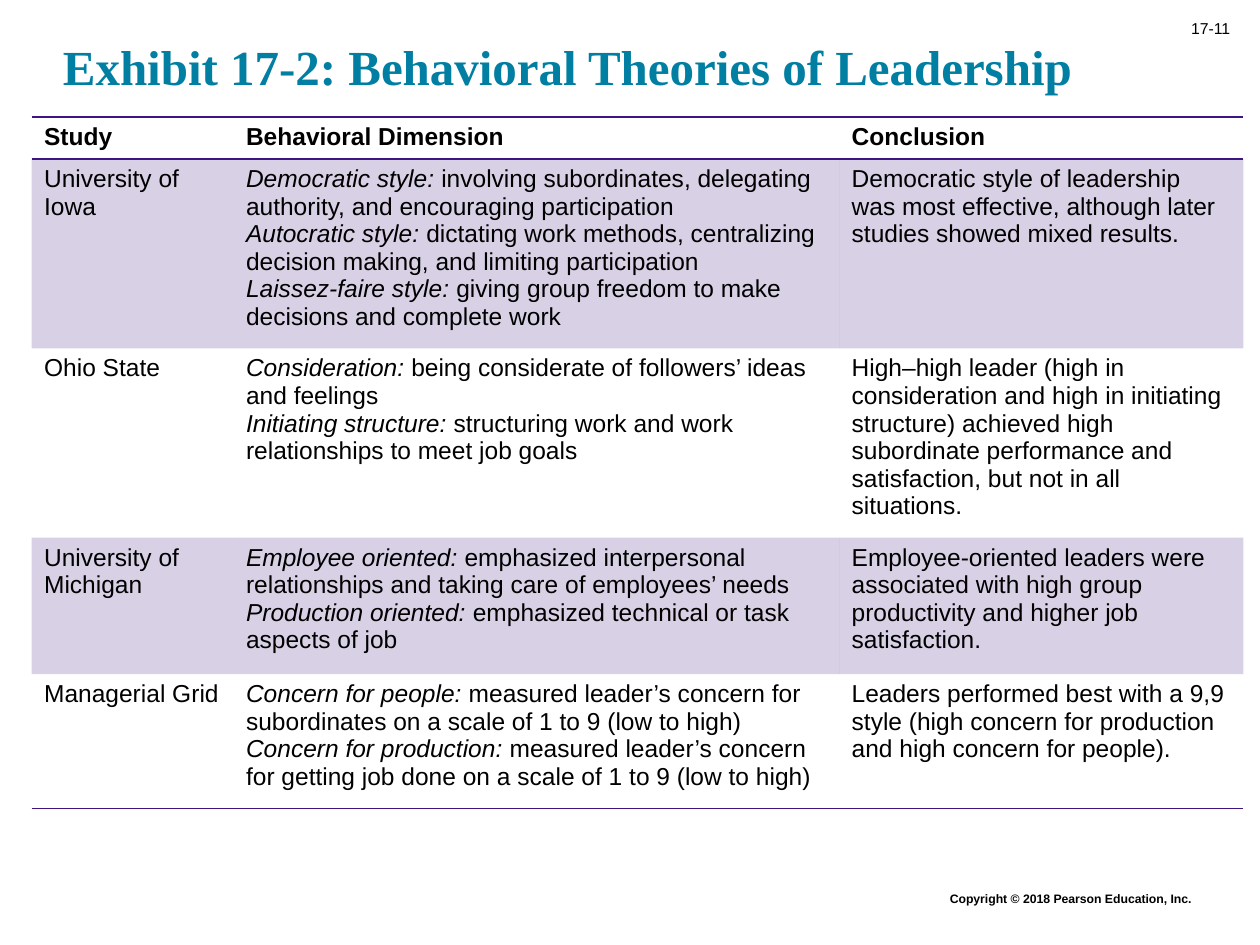
import pptx
import pptx.util
import pptx.dml.color
import pptx.enum.text
import pptx.oxml
from lxml import etree

Pt = pptx.util.Pt
RGB = pptx.dml.color.RGBColor.from_string
ALIGN = pptx.enum.text.PP_ALIGN
ANCHOR = pptx.enum.text.MSO_ANCHOR

# Content: a cell is a list of paragraphs, each an (italic lead, plain text) pair
TITLE = "Exhibit 17-2: Behavioral Theories of Leadership"
NUMBER = "17-11"
COPYRIGHT = "Copyright © 2018 Pearson Education, Inc."
HEADER = ["Study", "Behavioral Dimension", "Conclusion"]
STUDIES = [
    ("University of Iowa",
     [("Democratic style: ", "involving subordinates, delegating authority, "
       "and encouraging participation"),
      ("Autocratic style: ", "dictating work methods, centralizing decision making, "
       "and limiting participation"),
      ("Laissez-faire style: ", "giving group freedom to make decisions "
       "and complete work")],
     "Democratic style of leadership was most effective, although later studies "
     "showed mixed results."),
    ("Ohio State",
     [("Consideration: ", "being considerate of followers’ ideas and feelings"),
      ("Initiating structure: ", "structuring work and work relationships "
       "to meet job goals")],
     "High–high leader (high in consideration and high in initiating structure) "
     "achieved high subordinate performance and satisfaction, but not in all situations."),
    ("University of Michigan",
     [("Employee oriented: ", "emphasized interpersonal relationships "
       "and taking care of employees’ needs"),
      ("Production oriented: ", "emphasized technical or task aspects of job")],
     "Employee-oriented leaders were associated with high group productivity "
     "and higher job satisfaction."),
    ("Managerial Grid",
     [("Concern for people: ", "measured leader’s concern for subordinates "
       "on a scale of 1 to 9 (low to high)"),
      ("Concern for production: ", "measured leader’s concern for getting job done "
       "on a scale of 1 to 9 (low to high)")],
     "Leaders performed best with a 9,9 style (high concern for production "
     "and high concern for people)."),
]

THEME = {
    "title": {"name": "Times New Roman", "size": 28, "bold": True, "color": "007FA3"},
    "head": {"name": "Arial", "size": 14, "bold": True, "color": "000000"},
    "body": {"name": "Arial", "size": 14, "bold": False, "color": "000000"},
    "number": {"name": "Arial", "size": 9, "bold": False, "color": "000000"},
    "copyright": {"name": "Arial", "size": 7, "bold": True, "color": "000000"},
    "accent": "3C1581",
    "band_alpha": 20,
    "rule": 1,
}
NO_STYLE = "{2D5ABB26-0587-4C30-8999-92F81FD0307C}"

# Table geometry in points
TABLE_LEFT, TABLE_TOP = 18, 66.8
COLS = [115.4, 346.1, 231.1]
ROWS = [24.2, 107.5, 107.7, 78, 76.9]


def add_run(p, text, style, italic=False):
    r = p.add_run()
    r.text = text
    for key, value in dict(THEME[style], italic=italic).items():
        if key == "color":
            r.font.color.rgb = RGB(value)
        else:
            setattr(r.font, key, Pt(value) if key == "size" else value)


def add_text(s, box, text, style, align=ALIGN.LEFT, **frame):
    tf = s.shapes.add_textbox(*map(Pt, box)).text_frame
    for key, value in dict(frame, word_wrap=True).items():
        setattr(tf, key, value)
    tf.paragraphs[0].alignment = align
    add_run(tf.paragraphs[0], text, style)


def fill_cell(cell, paragraphs, style):
    tf = cell.text_frame
    for i, (lead, text) in enumerate(paragraphs):
        p = tf.add_paragraph() if i else tf.paragraphs[0]
        if lead:
            add_run(p, lead, style, italic=True)
        add_run(p, text, style)


def shade(cell):
    cell.fill.solid()
    cell.fill.fore_color.rgb = RGB(THEME["accent"])
    color = cell._tc.tcPr.find(".//" + pptx.oxml.ns.qn("a:srgbClr"))
    alpha = etree.SubElement(color, pptx.oxml.ns.qn("a:alpha"))
    alpha.set("val", str(THEME["band_alpha"] * 1000))


def rule(cell, sides):
    for i, side in enumerate(sides):
        cell._tc.get_or_add_tcPr().insert(i, pptx.oxml.parse_xml(
            f'<a:ln{side} {pptx.oxml.ns.nsdecls("a")} w="{Pt(THEME["rule"])}">'
            f'<a:solidFill><a:srgbClr val="{THEME["accent"]}"/></a:solidFill>'
            f'</a:ln{side}>'))


def add_study_table(s):
    rows = [HEADER] + STUDIES
    frame = s.shapes.add_table(len(rows), len(COLS), Pt(TABLE_LEFT), Pt(TABLE_TOP),
                               Pt(sum(COLS)), Pt(sum(ROWS)))
    table = frame.table
    table.horz_banding = False
    table._tbl.tblPr.find(pptx.oxml.ns.qn("a:tableStyleId")).text = NO_STYLE
    for col, width in zip(table.columns, COLS):
        col.width = Pt(width)
    for i, (row, height) in enumerate(zip(rows, ROWS)):
        table.rows[i].height = Pt(height)
        for j, content in enumerate(row):
            cell = table.cell(i, j)
            paragraphs = [("", content)] if isinstance(content, str) else content
            fill_cell(cell, paragraphs, "body" if i else "head")
            # Odd rows are banded; rules frame the header and close the table
            if i % 2:
                shade(cell)
            else:
                cell.fill.background()
            if i == 0:
                rule(cell, "TB")
            elif i == len(rows) - 1:
                rule(cell, "B")


def main():
    prs = pptx.Presentation()
    prs.slide_width, prs.slide_height = Pt(720), Pt(540)
    s = prs.slides.add_slide(prs.slide_layouts[6])

    # Footer and slide number
    add_text(s, (126, 506, 562, 16), COPYRIGHT, "copyright", ALIGN.RIGHT)
    add_text(s, (666.5, 8.8, 43.5, 14.4), NUMBER, "number", ALIGN.RIGHT,
             vertical_anchor=ANCHOR.MIDDLE)

    # Title
    add_text(s, (36, 18, 648, 42), TITLE, "title", margin_left=0, margin_right=0,
             margin_top=Pt(3), margin_bottom=0)

    # Table of studies
    add_study_table(s)
    prs.save("out.pptx")


if __name__ == "__main__":
    main()
